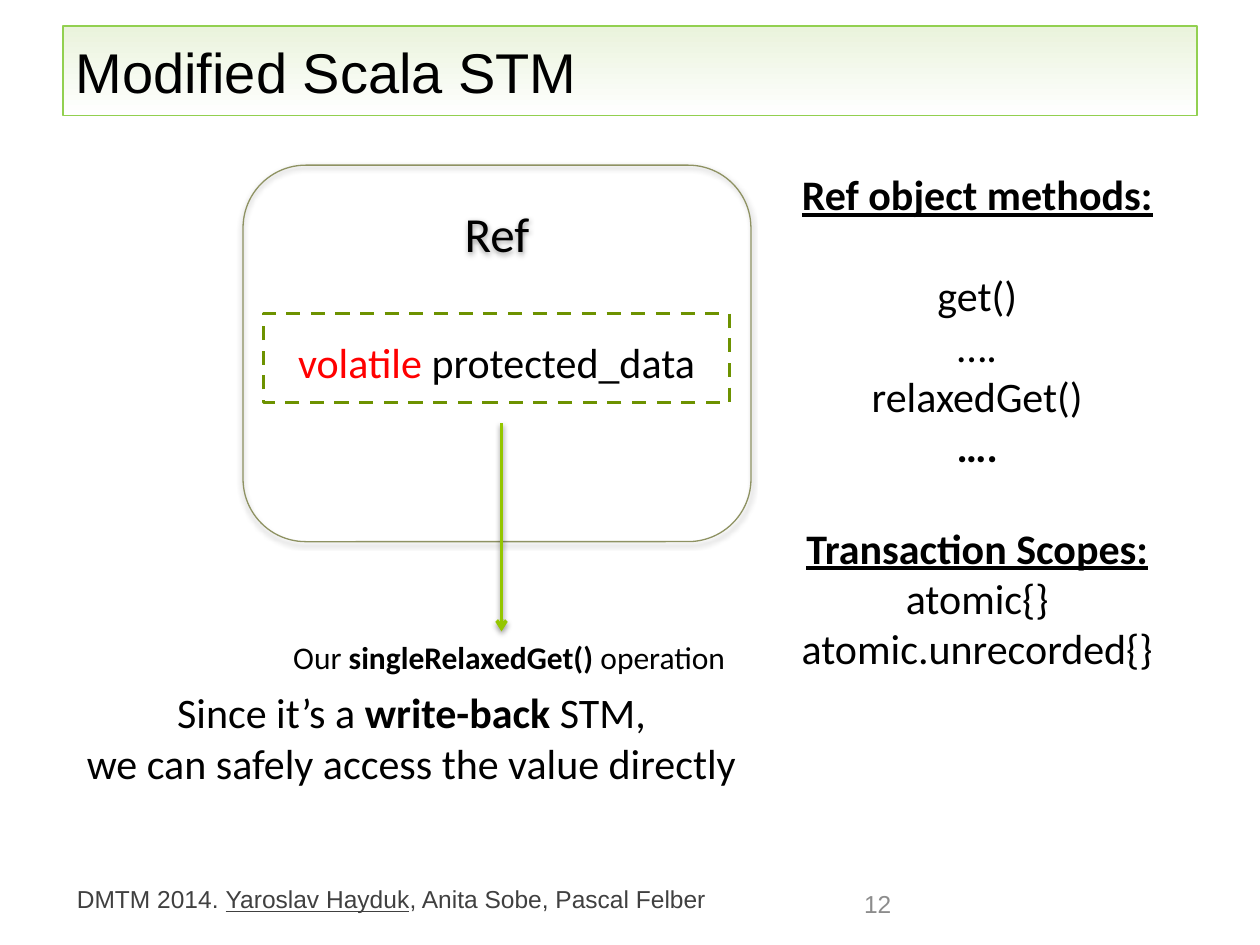
from lxml import etree
from pptx import Presentation
from pptx.dml.color import RGBColor
from pptx.enum import dml, shapes, text
from pptx.oxml import parse_xml
from pptx.oxml.ns import nsdecls, qn
from pptx.util import Cm, Pt

COLORS = {
    "black": "000000", "red": "FF0000", "white": "FFFFFF",
    "footer": "404040", "number": "8C8C8C",
    "title_line": "92D050", "title_tint": "EAF3DC",
    "ref_line": "8E9262", "data_line": "6D9200", "arrow": "94C600",
}
BOLD = {"bold": True}
UNDERLINE = {"underline": True}
HEADING = {**BOLD, **UNDERLINE}
CENTER, LEFT = text.PP_ALIGN.CENTER, text.PP_ALIGN.LEFT
MIDDLE, TOP = text.MSO_ANCHOR.MIDDLE, text.MSO_ANCHOR.TOP


def rgb(name):
    return RGBColor.from_string(COLORS[name])


class SlideBuilder:
    """Holds the text style and the current slide."""

    def __init__(self, prs, font="Calibri"):
        self.slide = prs.slides.add_slide(prs.slide_layouts[1])
        self.font = font

    def fill_text(self, sp, paragraphs, size, color="black", font=None,
                  align=CENTER, anchor=TOP, wrap=True, gaps=None, **margins):
        """Each paragraph is a list of (text, format) runs."""
        tf = sp.text_frame
        frame = {"word_wrap": wrap, "vertical_anchor": anchor,
                 "auto_size": text.MSO_AUTO_SIZE.NONE, **margins}
        for name, value in frame.items():
            setattr(tf, name, value)
        for i, runs in enumerate(paragraphs):
            p = tf.add_paragraph() if i else tf.paragraphs[0]
            p.alignment = align
            p.space_before = Pt((gaps or {}).get(i, 0))
            for words, fmt in runs:
                r = p.add_run()
                r.text = words
                style = {"name": font or self.font, "size": Pt(size), **fmt}
                r.font.color.rgb = rgb(style.pop("color", color))
                for name, value in style.items():
                    setattr(r.font, name, value)

    def outline(self, sp, color, width, dash=None):
        sp.line.color.rgb = rgb(color)
        sp.line.width = Pt(width)
        if dash:
            sp.line.dash_style = dash

    def effects(self, sp, shadow=True):
        sp_pr = sp._element.spPr
        for old in sp_pr.findall(qn("a:effectLst")):
            sp_pr.remove(old)
        inner = ('<a:outerShdw blurRad="39370" dist="20320" dir="5400000" rotWithShape="0">'
                 '<a:srgbClr val="000000"><a:alpha val="38000"/></a:srgbClr>'
                 '</a:outerShdw>') if shadow else ""
        sp_pr.append(parse_xml(f'<a:effectLst {nsdecls("a")}>{inner}</a:effectLst>'))

    def place(self, sp, box):
        for name, value in zip(("left", "top", "width", "height"), box):
            setattr(sp, name, Cm(value))

    def title(self, box, words):
        sp = self.slide.shapes.title
        self.place(sp, box)
        sp.fill.gradient()
        sp.fill.gradient_angle = 90
        for stop, color in zip(sp.fill.gradient_stops, ("white", "title_tint")):
            stop.color.rgb = rgb(color)
        self.outline(sp, "title_line", 1)
        self.fill_text(sp, [[(words, {})]], 32, font="Arial", align=LEFT, anchor=MIDDLE)

    def body(self, box, paragraphs, size, gaps):
        sp = self.slide.placeholders[1]
        self.place(sp, box)
        self.fill_text(sp, paragraphs, size, gaps=gaps)
        for p in sp.text_frame.paragraphs:
            p_pr = p._p.get_or_add_pPr()
            p_pr.set("marL", "0")
            p_pr.set("indent", "0")
            etree.SubElement(p_pr, qn("a:buNone"))

    def label(self, box, paragraphs, size, **style):
        sp = self.slide.shapes.add_textbox(*map(Cm, box))
        self.fill_text(sp, paragraphs, size, **style)

    def frame(self, kind, box, line, paragraphs, size, shadow=False, **style):
        sp = self.slide.shapes.add_shape(kind, *map(Cm, box))
        sp.fill.background()
        self.outline(sp, *line)
        self.effects(sp, shadow)
        self.fill_text(sp, paragraphs, size, **style)

    def arrow(self, x, top, bottom):
        sp = self.slide.shapes.add_connector(
            shapes.MSO_CONNECTOR.STRAIGHT, Cm(x), Cm(top), Cm(x), Cm(bottom))
        self.outline(sp, "arrow", 2)
        etree.SubElement(sp.line._get_or_add_ln(), qn("a:tailEnd"), type="arrow")
        self.effects(sp)


def main():
    prs = Presentation()
    prs.slide_width, prs.slide_height = Cm(25.4), Cm(19.05)
    s = SlideBuilder(prs)

    # Footer and page number
    s.label((1.3, 17.7, 15, 0.86),
            [[("DMTM 2014. ", {}), ("Yaroslav Hayduk", UNDERLINE),
              (", Anita Sobe, Pascal Felber", {})]],
            14, color="footer", font="Arial", align=LEFT)
    s.label((16.69, 17.7, 2.01, 1.02), [[("12", {})]],
            14, color="number", font="Arial", anchor=MIDDLE)

    s.title((1.27, 0.53, 22.86, 1.8), "Modified Scala STM")

    # Ref object with its protected data
    s.frame(shapes.MSO_SHAPE.ROUNDED_RECTANGLE, (4.9, 3.33, 10.24, 7.59),
            ("ref_line", 0.75), [[("Ref", {})]], 28, shadow=True,
            margin_top=Cm(0.4), margin_bottom=0)
    s.frame(shapes.MSO_SHAPE.RECTANGLE, (5.31, 6.32, 9.4, 1.8),
            ("data_line", 2, dml.MSO_LINE.DASH),
            [[("volatile ", {"color": "red"}), ("protected_data", {})]], 24,
            margin_top=Cm(0.47))

    # Methods and scopes
    s.body((15.7, 3.27, 8, 13.23),
           [[("Ref object methods:", HEADING)],
            [("get()", {})],
            [("….", {})],
            [("relaxedGet()", {})],
            [("….", BOLD)],
            [("Transaction Scopes:", HEADING)],
            [("atomic{}", {})],
            [("atomic.unrecorded{}", {})]],
           24, gaps={1: 29, 5: 29})

    # Direct access to the value
    s.label((0.89, 13.72, 14.81, 2.31),
            [[("Since it’s a ", {}), ("write-back ", BOLD), ("STM,", {})],
             [("we can safely access the value directly", {})]], 24)
    s.arrow(10.11, 8.53, 12.73)
    s.label((5.59, 12.73, 9.35, 1.02),
            [[("Our ", {}), ("singleRelaxedGet() ", BOLD), ("operation", {})]],
            18, wrap=False)

    prs.save("out.pptx")


if __name__ == "__main__":
    main()
